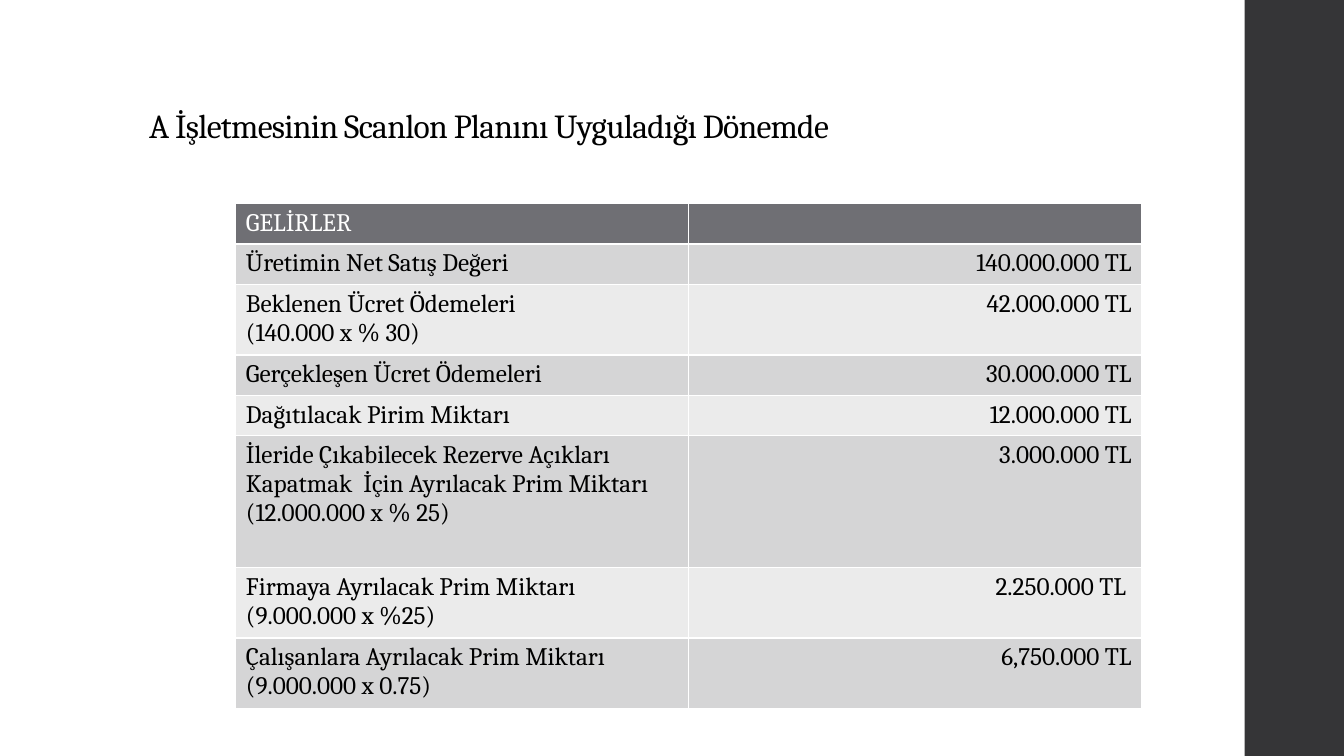
from lxml.etree import SubElement
from pptx import Presentation
from pptx.dml.color import RGBColor
from pptx.enum.shapes import MSO_SHAPE
from pptx.enum.text import MSO_ANCHOR, PP_ALIGN
from pptx.oxml.ns import qn
from pptx.util import Pt

WHITE = RGBColor(0xFF, 0xFF, 0xFF)
BLACK = RGBColor(0, 0, 0)
DARK = RGBColor(0x35, 0x35, 0x37)
HEAD = RGBColor(0x6F, 0x6F, 0x74)
BANDS = RGBColor(0xEB, 0xEB, 0xEB), RGBColor(0xD5, 0xD5, 0xD6)
FONT = "Cambria"

SHORT, DOUBLE, TALL = 28.7, 50.3, 94
ROWS = [
    (SHORT, "GELİRLER", ""),
    (SHORT, "Üretimin Net Satış Değeri", "140.000.000 TL"),
    (DOUBLE, "Beklenen Ücret Ödemeleri\n(140.000 x % 30)", "42.000.000 TL"),
    (SHORT, "Gerçekleşen Ücret Ödemeleri", "30.000.000 TL"),
    (SHORT, "Dağıtılacak Pirim Miktarı", "12.000.000 TL"),
    (TALL, "İleride Çıkabilecek Rezerve Açıkları Kapatmak  İçin Ayrılacak Prim Miktarı\n"
           "(12.000.000 x % 25)", "3.000.000 TL"),
    (DOUBLE, "Firmaya Ayrılacak Prim Miktarı\n(9.000.000 x %25)", "2.250.000 TL "),
    (DOUBLE, "Çalışanlara Ayrılacak Prim Miktarı\n(9.000.000 x 0.75)", "6,750.000 TL"),
]


def write(frame, text, size=18, color=BLACK, align=PP_ALIGN.LEFT, lead=None, track=None):
    """Fill a text frame, one paragraph per line; track is in points."""
    frame.word_wrap = True
    frame.text = text
    for para in frame.paragraphs:
        para.alignment = align
        para.line_spacing = lead
        para.font.size = Pt(size)
        for run in para.runs:
            run.font.name = FONT
            run.font.size = Pt(size)
            run.font.color.rgb = color
            if track is not None:
                run.font._element.set("spc", str(round(track * 100)))


def edge(cell, color=WHITE, width=1):
    """Draw all four borders of a cell; call before its fill is set."""
    props = cell._tc.get_or_add_tcPr()
    for side in ("lnL", "lnR", "lnT", "lnB"):
        line = SubElement(props, qn("a:" + side), w=str(Pt(width)))
        fill = SubElement(line, qn("a:solidFill"))
        SubElement(fill, qn("a:srgbClr"), val=str(color))


def add_bar(slide, left, top, width, height):
    bar = slide.shapes.add_shape(
        MSO_SHAPE.RECTANGLE, Pt(left), Pt(top), Pt(width), Pt(height))
    bar.shadow.inherit = False
    bar.fill.solid()
    bar.fill.fore_color.rgb = DARK
    bar.line.fill.background()


def add_title(slide, left, top, width, height):
    box = slide.shapes.add_textbox(Pt(left), Pt(top), Pt(width), Pt(height))
    box.text_frame.vertical_anchor = MSO_ANCHOR.BOTTOM
    write(box.text_frame, "A İşletmesinin Scanlon Planını Uyguladığı Dönemde",
          size=24, lead=0.9, track=-0.5)


def add_sums(slide, left, top, width):
    """Place the table of income; its height follows from the rows."""
    height = sum(row[0] for row in ROWS)
    table = slide.shapes.add_table(
        len(ROWS), 2, Pt(left), Pt(top), Pt(width), Pt(height)).table
    for col in table.columns:
        col.width = Pt(width / 2)
    for r, (tall, *texts) in enumerate(ROWS):
        table.rows[r].height = Pt(tall)
        for c, text in enumerate(texts):
            cell = table.cell(r, c)
            edge(cell)
            cell.fill.solid()
            cell.fill.fore_color.rgb = BANDS[r % 2] if r else HEAD
            write(cell.text_frame, text, color=BLACK if r else WHITE,
                  align=PP_ALIGN.RIGHT if c else PP_ALIGN.LEFT)


def main():
    deck = Presentation()
    deck.slide_width, deck.slide_height = Pt(960), Pt(540)
    slide = deck.slides.add_slide(deck.slide_layouts[6])
    add_bar(slide, 889, 0, 71, 540)
    add_title(slide, 99.4, 28.8, 763, 79)
    add_sums(slide, 168.5, 145.5, 647)
    deck.save("out.pptx")


if __name__ == "__main__":
    main()
